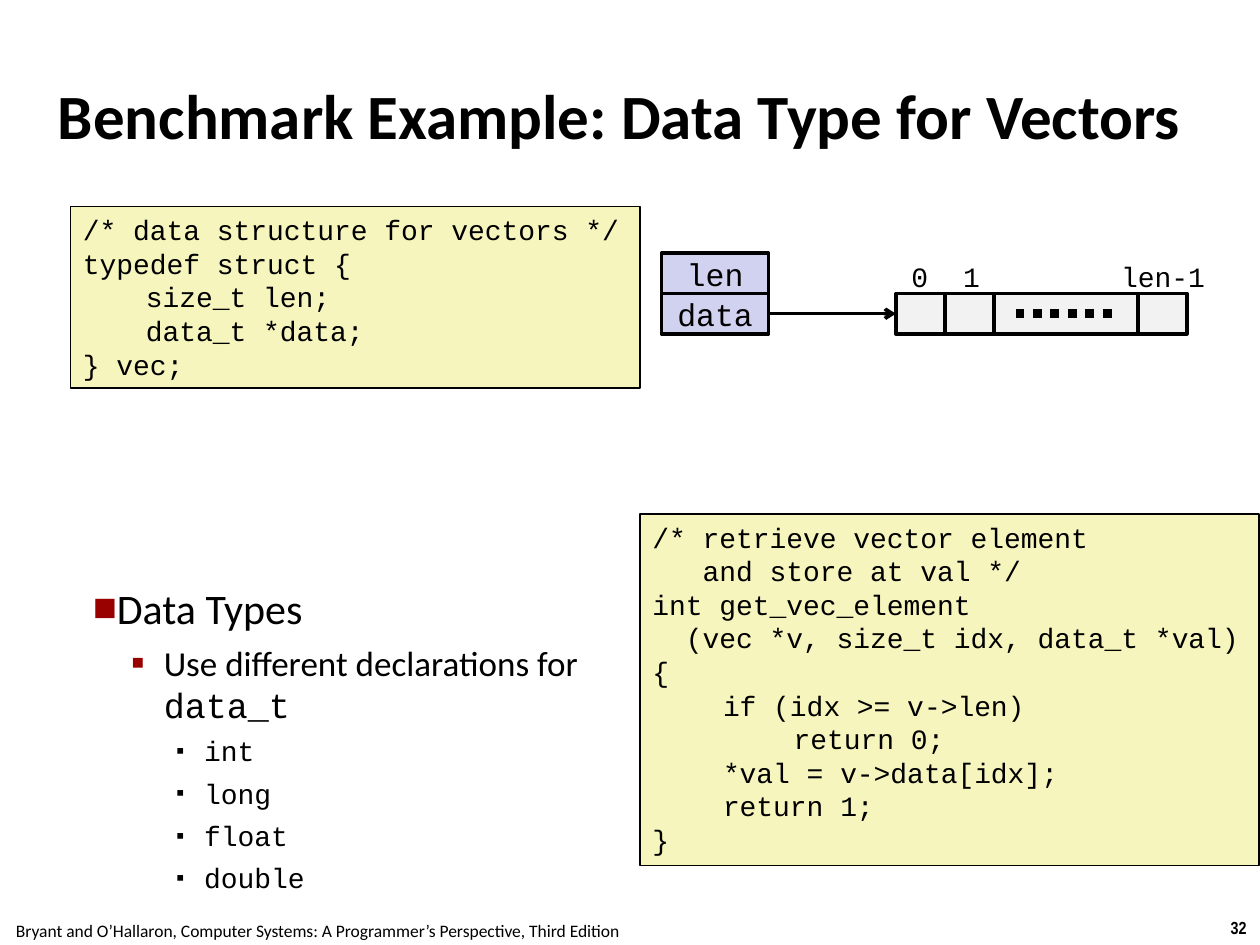
import pptx
import pptx.dml.color
import pptx.enum.shapes
import pptx.enum.text
import pptx.oxml
import pptx.oxml.ns
import pptx.util

RGB = pptx.dml.color.RGBColor
BLACK = RGB(0x00, 0x00, 0x00)
CODE_YELLOW = RGB(0xF6, 0xF5, 0xBD)
FIELD_LILAC = RGB(0xD1, 0xD1, 0xF0)
CELL_GREY = RGB(0xF2, 0xF2, 0xF2)
BULLET_RED = RGB(0x99, 0x00, 0x00)
SANS, MONO = "Calibri", "Courier New"
ALIGN = pptx.enum.text.PP_ALIGN
ANCHOR = pptx.enum.text.MSO_ANCHOR
INSETS = ("margin_left", "margin_top", "margin_right", "margin_bottom")


class VectorSlide:
    """Places elements on a grid of 10 columns by 7.5 rows."""

    COLUMNS, ROWS = 10, 7.5

    def __init__(self):
        self.deck = pptx.Presentation()
        self.deck.slide_width = pptx.util.Inches(self.COLUMNS)
        self.deck.slide_height = pptx.util.Inches(self.ROWS)
        self.slide = self.deck.slides.add_slide(self.deck.slide_layouts[6])

    def at(self, *cells):
        return [pptx.util.Inches(cell) for cell in cells]

    def xml(self, tag, **values):
        element = pptx.oxml.parse_xml(f"<a:{tag} {pptx.oxml.ns.nsdecls('a')}/>")
        for name, value in values.items():
            element.set(name, str(value))
        return element

    def frame(self, holder, wrap=False, anchor=ANCHOR.TOP, insets=(0.1, 0.05, 0.1, 0.05)):
        settings = {"word_wrap": wrap, "vertical_anchor": anchor}
        settings.update(zip(INSETS, self.at(*insets)))
        for name, value in settings.items():
            setattr(holder.text_frame, name, value)
        return holder.text_frame

    def run(self, paragraph, words, size, face=SANS, bold=False):
        run = paragraph.add_run()
        run.text = words
        style = {"size": pptx.util.Pt(size), "name": face, "bold": bold}
        for name, value in style.items():
            setattr(run.font, name, value)
        run.font.color.rgb = BLACK

    def label(self, place, words, size, face=SANS, bold=False, align=ALIGN.CENTER, **layout):
        box = self.slide.shapes.add_textbox(*self.at(*place))
        paragraph = self.frame(box, **layout).paragraphs[0]
        paragraph.alignment = align
        self.run(paragraph, words, size, face, bold)

    def box(self, place, fill, weight=2):
        box = self.slide.shapes.add_shape(
            pptx.enum.shapes.MSO_SHAPE.RECTANGLE, *self.at(*place))
        box.shadow.inherit = False
        box.fill.solid()
        box.fill.fore_color.rgb = fill
        box.line.color.rgb = BLACK
        box.line.width = pptx.util.Pt(weight)
        return box

    def field(self, place, name):
        frame = self.frame(self.box(place, FIELD_LILAC), anchor=ANCHOR.MIDDLE)
        frame.paragraphs[0].alignment = ALIGN.CENTER
        self.run(frame.paragraphs[0], name, 18, MONO)

    def code(self, place, listing, tab):
        frame = self.frame(self.box(place, CODE_YELLOW, weight=1))
        for number, line in enumerate(listing.strip("\n").split("\n")):
            paragraph = frame.add_paragraph() if number else frame.paragraphs[0]
            paragraph.alignment = ALIGN.LEFT
            stops = self.xml("tabLst")
            for step in (1, 2):
                stops.append(self.xml("tab", pos=pptx.util.Inches(step * tab), algn="l"))
            paragraph._p.get_or_add_pPr().append(stops)
            self.run(paragraph, line, 16, MONO)

    def line(self, start, end, weight, **ends):
        line = self.slide.shapes.add_connector(
            pptx.enum.shapes.MSO_CONNECTOR.STRAIGHT, *self.at(*start, *end))
        line.line.color.rgb = BLACK
        line.line.width = pptx.util.Pt(weight)
        for tag, value in ends.items():
            key = "val" if tag == "prstDash" else "type"
            line.line._get_or_add_ln().append(self.xml(tag, **{key: value}))
        line._element.spPr.append(self.xml("effectLst"))

    def bullets(self, place, levels, items):
        holder = self.slide.shapes.add_textbox(*self.at(*place))
        frame = self.frame(holder, wrap=True, insets=(0.04,) * 4)
        for number, (level, runs) in enumerate(items):
            mark, color, share, left, indent, before, size = levels[level]
            paragraph = frame.add_paragraph() if number else frame.paragraphs[0]
            paragraph.level = level
            paragraph.space_before = pptx.util.Pt(before)
            properties = paragraph._p.get_or_add_pPr()
            properties.set("marL", str(pptx.util.Inches(left)))
            properties.set("indent", str(pptx.util.Inches(indent)))
            tint = self.xml("buClr")
            tint.append(self.xml("srgbClr", val=color))
            properties.extend([tint, self.xml("buSzPct", val=share * 1000),
                               self.xml("buFont", typeface=SANS),
                               self.xml("buChar", char=mark)])
            for words, face in runs:
                self.run(paragraph, words, size, face)


VECTOR_CODE = """
/* data structure for vectors */
typedef struct {
\tsize_t len;
\tdata_t *data;
} vec;
"""
ELEMENT_CODE = """
/* retrieve vector element
   and store at val */
int get_vec_element
  (vec *v, size_t idx, data_t *val)
{
\tif (idx >= v->len)
\t\treturn 0;
\t*val = v->data[idx];
\treturn 1;
}
"""
# mark, colour, size in percent, left, indent, space before, text size
LEVELS = [("■", BULLET_RED, 60, 0, 0, 6, 24),
          ("▪", BULLET_RED, 110, 0.56, -0.26, 5, 20),
          ("▪", BLACK, 80, 0.88, -0.22, 5, 16)]
DATA_TYPES = [(0, [("Data Types", SANS)]),
              (1, [("Use different declarations for ", SANS), ("data_t", MONO)])]
DATA_TYPES += [(2, [(name, MONO)]) for name in ("int", "long", "float", "double")]


def main():
    page = VectorSlide()

    # Footer and title
    page.label((9.66, 7.23, 0.34, 0.27), "32", 10, "Arial Narrow", bold=True)
    page.label((-0.02, 7.25, 5.08, 0.27), "Bryant and O’Hallaron, Computer Systems: "
               "A Programmer’s Perspective, Third Edition", 10)
    page.label((0.42, 0.28, 9.17, 1.25), "Benchmark Example: Data Type for Vectors", 36,
               bold=True, align=ALIGN.LEFT, wrap=True, anchor=ANCHOR.MIDDLE,
               insets=(0.04,) * 4)

    # Code listings
    page.code((0.56, 1.64, 4.52, 1.44), VECTOR_CODE, tab=0.5)
    page.code((5.08, 4.08, 4.91, 2.79), ELEMENT_CODE, tab=0.56)

    # Vector header pointing at its array
    row, height, array = 2.33, 0.32, 7.11
    for step, name in enumerate(("len", "data")):
        page.field((5.25, row + (step - 1) * height, 0.85, height), name)
    left = array
    for width in (0.39, 0.39, 1.14, 0.39):
        page.box((left, row, width, height), CELL_GREY)
        left += width
    middle = row + height / 2
    page.line((6.1, middle), (array, middle), 2, tailEnd="arrow")
    page.line((8.06, middle), (8.86, middle), 5, prstDash="sysDot", round="")

    # Array indices
    for left, width, index in ((7.13, 0.34, "0"), (7.54, 0.34, "1"), (8.79, 0.88, "len-1")):
        page.label((left, 2.01, width, 0.37), index, 16, MONO)

    # Data types
    page.bullets((0.7, 4.58, 4.23, 2.43), LEVELS, DATA_TYPES)

    page.deck.save("out.pptx")


if __name__ == "__main__":
    main()
